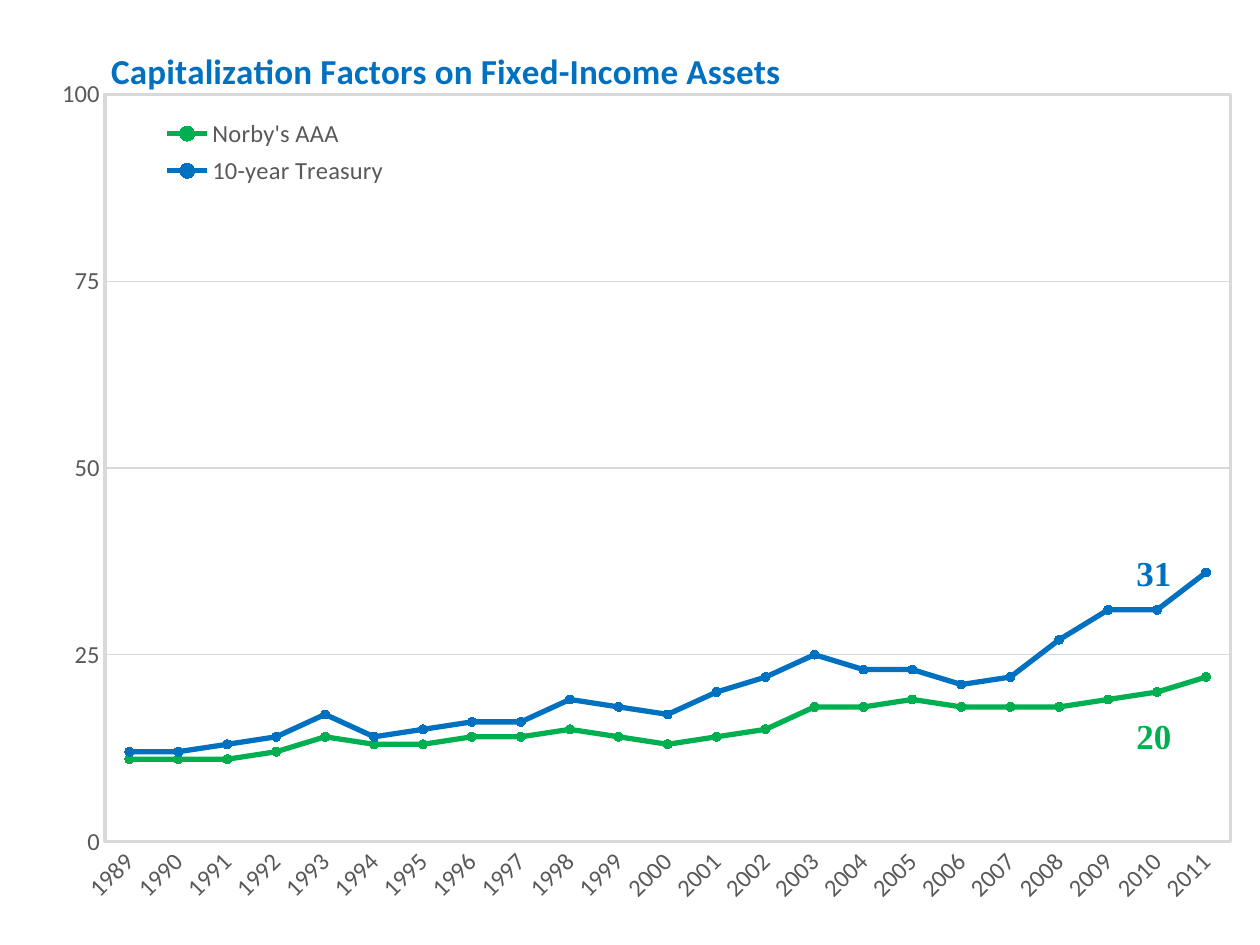
from lxml import etree
from pptx import Presentation
from pptx import util as u
from pptx.chart.data import CategoryChartData
from pptx.dml.color import RGBColor
from pptx.enum import chart as ch
from pptx.oxml import parse_xml
from pptx.oxml.ns import nsdecls, qn

GREEN, BLUE, GRAY, PALE = "00B050", "0070C0", "595959", "D9D9D9"


def tint(part, color):
    """Colour a font, or make a fill solid."""
    if hasattr(part, "solid"):
        part.solid()
        part.fore_color.rgb = RGBColor.from_string(color)
    else:
        part.color.rgb = RGBColor.from_string(color)


def place(node, index, target=None, **sizes):
    """Give a chart part a fixed layout, in fractions of the chart."""
    for old in node.findall(qn("c:layout")):
        node.remove(old)
    layout = parse_xml(f"<c:layout {nsdecls('c')}><c:manualLayout/></c:layout>")
    items = {"layoutTarget": target} if target else {}
    items.update(xMode="edge", yMode="edge", **sizes)
    for tag, val in items.items():
        etree.SubElement(layout[0], qn("c:" + tag)).set("val", str(val))
    node.insert(index, layout)


prs = Presentation()
prs.slide_width, prs.slide_height = u.Cm(25.4), u.Cm(19.05)
slide = prs.slides.add_slide(prs.slide_layouts[6])

# Line chart
data = CategoryChartData(number_format="0")
data.categories = [str(year) for year in range(1989, 2012)]
data.add_series("Norby's AAA", [11, 11, 11, 12, 14, 13, 13, 14, 14, 15, 14, 13,
                                14, 15, 18, 18, 19, 18, 18, 18, 19, 20, 22])
data.add_series("10-year Treasury", [12, 12, 13, 14, 17, 14, 15, 16, 16, 19, 18, 17,
                                     20, 22, 25, 23, 23, 21, 22, 27, 31, 31, 36])
chart = slide.shapes.add_chart(ch.XL_CHART_TYPE.LINE_MARKERS, u.Cm(0.64), u.Cm(0.43),
                               u.Cm(24.56), u.Cm(18.21), data).chart
chart.font.name, chart.font.size = "Calibri", u.Pt(10)
plot = chart.plots[0]
plot.vary_by_categories = False
for line, color in zip(plot.series, (GREEN, BLUE)):
    line.smooth = False
    line.format.line.width = u.Pt(3)
    tint(line.format.line.fill, color)
    line.marker.style, line.marker.size = ch.XL_MARKER_STYLE.CIRCLE, 5
    tint(line.marker.format.fill, color)
    tint(line.marker.format.line.fill, color)

# Axes
years, values = chart.category_axis, chart.value_axis
values.minimum_scale, values.maximum_scale, values.major_unit = 0, 100, 25
values.tick_labels.number_format = "0"
values.tick_labels.number_format_is_linked = False
values.format.line.fill.background()
grid = values.major_gridlines.format.line
for rule in (grid, years.format.line):
    rule.width = u.Pt(0.75)
    tint(rule.fill, PALE)
for axis in (years, values):
    axis.major_tick_mark = axis.minor_tick_mark = ch.XL_TICK_MARK.NONE
years.has_major_gridlines = False

# Title and legend
chart.has_title = chart.has_legend = True
title, legend = chart.chart_title, chart.legend
run = title.text_frame.paragraphs[0].add_run()
run.text = "Capitalization Factors on Fixed-Income Assets"
run.font.name, run.font.size, run.font.bold = "Calibri", u.Pt(20), True
tint(run.font, BLUE)
legend.position = ch.XL_LEGEND_POSITION.BOTTOM
legend.include_in_layout = True
for font in (years.tick_labels.font, values.tick_labels.font, legend.font):
    font.name, font.size = "Calibri", u.Pt(14)
    tint(font, GRAY)
years._element.find(qn("c:txPr")).find(qn("a:bodyPr")).set("rot", "-2700000")

# Fixed places inside the chart, and the frame of the plot
area = chart._chartSpace.chart.plotArea
place(area, 0, "inner", x=0.06, y=0.081, w=0.924, h=0.827)
place(title._element, 1, x=0.06, y=0.02)
place(legend._element, 1, x=0.1, y=0.1, w=0.2, h=0.09)
area.append(parse_xml(
    f'<c:spPr {nsdecls("c", "a")}><a:noFill/><a:ln w="{u.Pt(2.25)}"><a:solidFill>'
    f'<a:srgbClr val="{PALE}"/></a:solidFill></a:ln></c:spPr>'))

# Values called out for 2010
for label, top, color in (("31", 11, BLUE), ("20", 14.27, GREEN)):
    box = slide.shapes.add_textbox(u.Cm(22.66), u.Cm(top), u.Cm(1.47), u.Cm(1.07))
    box.text_frame.word_wrap = True
    run = box.text_frame.paragraphs[0].add_run()
    run.text = label
    run.font.name, run.font.size, run.font.bold = "Times New Roman", u.Pt(20), True
    tint(run.font, color)

prs.save("out.pptx")
